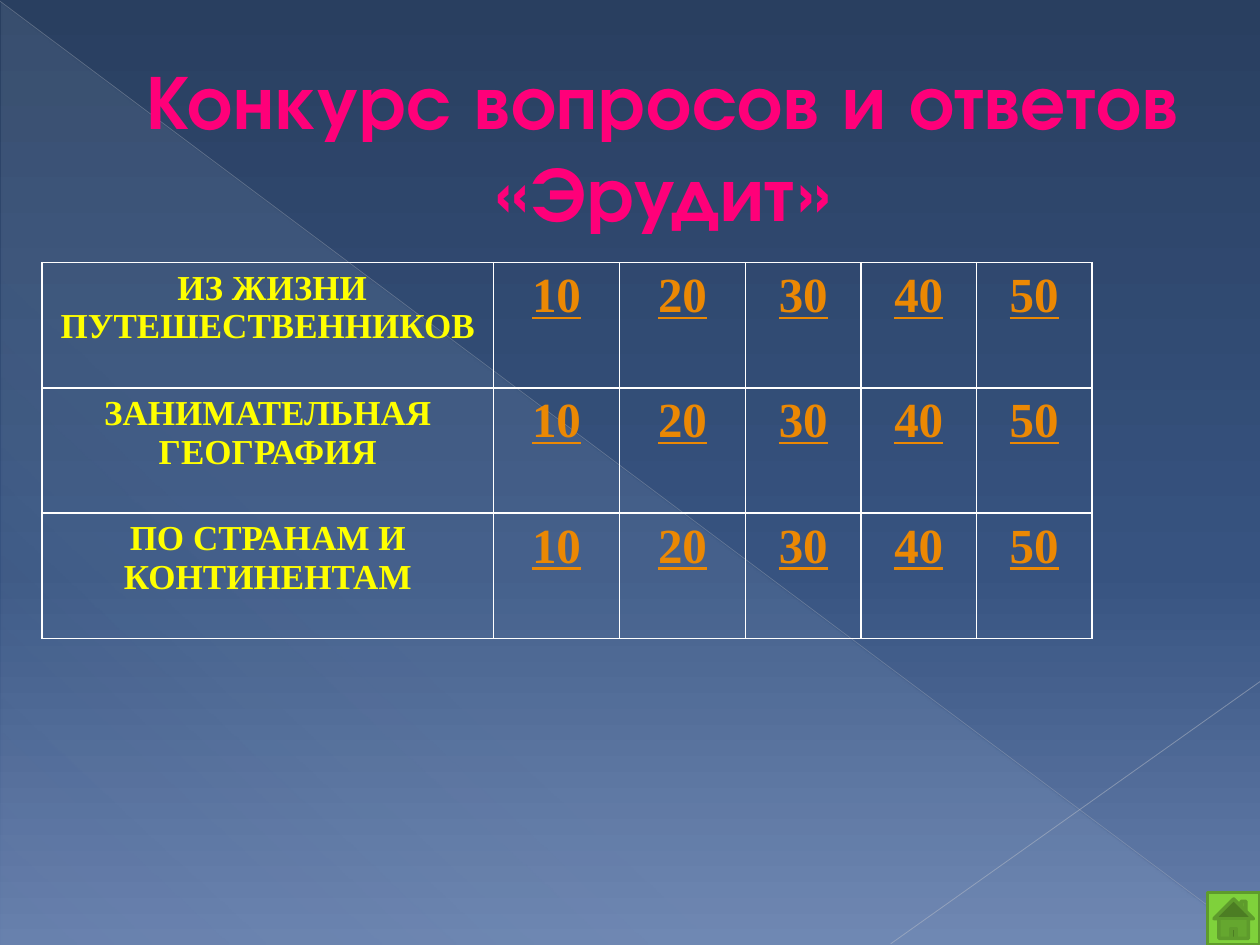
from lxml.etree import SubElement
from pptx import Presentation
from pptx.dml.color import RGBColor
from pptx.enum.shapes import MSO_CONNECTOR, MSO_SHAPE
from pptx.enum.text import MSO_ANCHOR, MSO_AUTO_SIZE, PP_ALIGN
from pptx.oxml.ns import qn
from pptx.util import Pt

THEME = {
    "background": [(0, "293F60", 100), (60, "375380", 100), (100, "667FAC", 100)],
    "veil": [(0, "D6ECFF", 10), (70, "D6ECFF", 8), (100, "D6ECFF", 1)],
    "border": "FFFFFF",
    "button": "7FD13B",
    "button_line": "5E9B2C",
    "title": {"name": "TeX Gyre Adventor", "size": Pt(44), "bold": True},
    "title_color": "FF0079",
    "topic": {"name": "Times New Roman", "size": Pt(20), "bold": True},
    "topic_color": "FFFF00",
    "points": {"name": "Times New Roman", "size": Pt(28), "bold": True, "underline": True},
    "points_color": "EB8803",
}


def add_color(parent, color, alpha=100):
    node = SubElement(parent, qn("a:srgbClr"), val=color)
    if alpha < 100:
        SubElement(node, qn("a:alpha"), val=str(alpha * 1000))


def set_gradient(fill, holder, stops, angle):
    fill.gradient()
    gradient = holder.xpath(".//a:gradFill")[0]
    for child in list(gradient):
        gradient.remove(child)
    stop_list = SubElement(gradient, qn("a:gsLst"))
    for position, color, alpha in stops:
        add_color(SubElement(stop_list, qn("a:gs"), pos=str(position * 1000)), color, alpha)
    SubElement(gradient, qn("a:lin"), ang=str(angle * 60000), scaled="0")


deck = Presentation()
deck.slide_width, deck.slide_height = Pt(720), Pt(540)
page = deck.slides.add_slide(deck.slide_layouts[5])

# Background with a translucent triangle
set_gradient(page.background.fill, page.element, THEME["background"], 90)
veil = page.shapes.add_shape(MSO_SHAPE.RIGHT_TRIANGLE, Pt(0.7), Pt(1.4), Pt(718.6), Pt(538.6))
veil.shadow.inherit = False
veil.line.fill.background()
set_gradient(veil.fill, veil.element, THEME["veil"], 133)

# Thin diagonal lines
for x1, y1, x2, y2, color, width, alpha in [
    (0, 0.7, 719.3, 539.3, "B7BCC5", 0.39, 35),
    (720, 389.5, 509, 539.3, "BFC3CB", 0.47, 45),
]:
    ray = page.shapes.add_connector(MSO_CONNECTOR.STRAIGHT, Pt(x1), Pt(y1), Pt(x2), Pt(y2))
    ray.line.width = Pt(width)
    ray.line.color.rgb = RGBColor.from_string(color)
    SubElement(ray.element.xpath(".//a:ln//a:srgbClr")[0], qn("a:alpha"), val=str(alpha * 1000))
    SubElement(ray.element.spPr, qn("a:effectLst"))

# Title, brought in front of the background shapes
title = page.shapes.title
page.shapes.element.append(title.element)
title.left, title.top, title.width, title.height = Pt(36), Pt(21.6), Pt(648), Pt(122.4)
box = title.text_frame
box.text = "Конкурс вопросов и ответов «Эрудит»"
box.word_wrap = True
box.auto_size = MSO_AUTO_SIZE.NONE
box.vertical_anchor = MSO_ANCHOR.MIDDLE
para = box.paragraphs[0]
para.alignment = PP_ALIGN.CENTER
properties = para._p.get_or_add_pPr()
properties.set("marL", str(Pt(38)))
properties.set("indent", "0")
span = para.runs[0]
for name, value in THEME["title"].items():
    setattr(span.font, name, value)
span.font.color.rgb = RGBColor.from_string(THEME["title_color"])
span._r.get_or_add_rPr().set("spc", "50")

# Question table: a topic and its points in each row
topics = [" ИЗ ЖИЗНИ ПУТЕШЕСТВЕННИКОВ", "ЗАНИМАТЕЛЬНАЯ ГЕОГРАФИЯ", "ПО СТРАНАМ И КОНТИНЕНТАМ"]
points = [10, 20, 30, 40, 50]
widths = [258, 72, 72, 66, 66, 66]
row_height = 71.6
table = page.shapes.add_table(
    len(topics), len(widths), Pt(24), Pt(150), Pt(sum(widths)), Pt(row_height * len(topics))
).table
table.first_row = table.horz_banding = False
for column, width in zip(table.columns, widths):
    column.width = Pt(width)
for row, topic in zip(table.rows, topics):
    row.height = Pt(row_height)
    for index, (cell, value) in enumerate(zip(row.cells, [topic, *points])):
        style = "points" if index else "topic"
        cell.text = str(value)
        para = cell.text_frame.paragraphs[0]
        para.alignment = PP_ALIGN.CENTER
        font = para.runs[0].font
        for name, setting in THEME[style].items():
            setattr(font, name, setting)
        font.color.rgb = RGBColor.from_string(THEME[style + "_color"])
        cell_properties = cell._tc.get_or_add_tcPr()
        for side in ("a:lnL", "a:lnR", "a:lnT", "a:lnB"):
            border = SubElement(cell_properties, qn(side), w=str(Pt(1)))
            add_color(SubElement(border, qn("a:solidFill")), THEME["border"])
        cell.fill.background()

# Home button in the corner
home = page.shapes.add_shape(MSO_SHAPE.ACTION_BUTTON_HOME, Pt(690), Pt(510), Pt(30), Pt(30))
home.shadow.inherit = False
home.fill.solid()
home.fill.fore_color.rgb = RGBColor.from_string(THEME["button"])
home.line.color.rgb = RGBColor.from_string(THEME["button_line"])
home.line.width = Pt(2)

deck.save("out.pptx")
